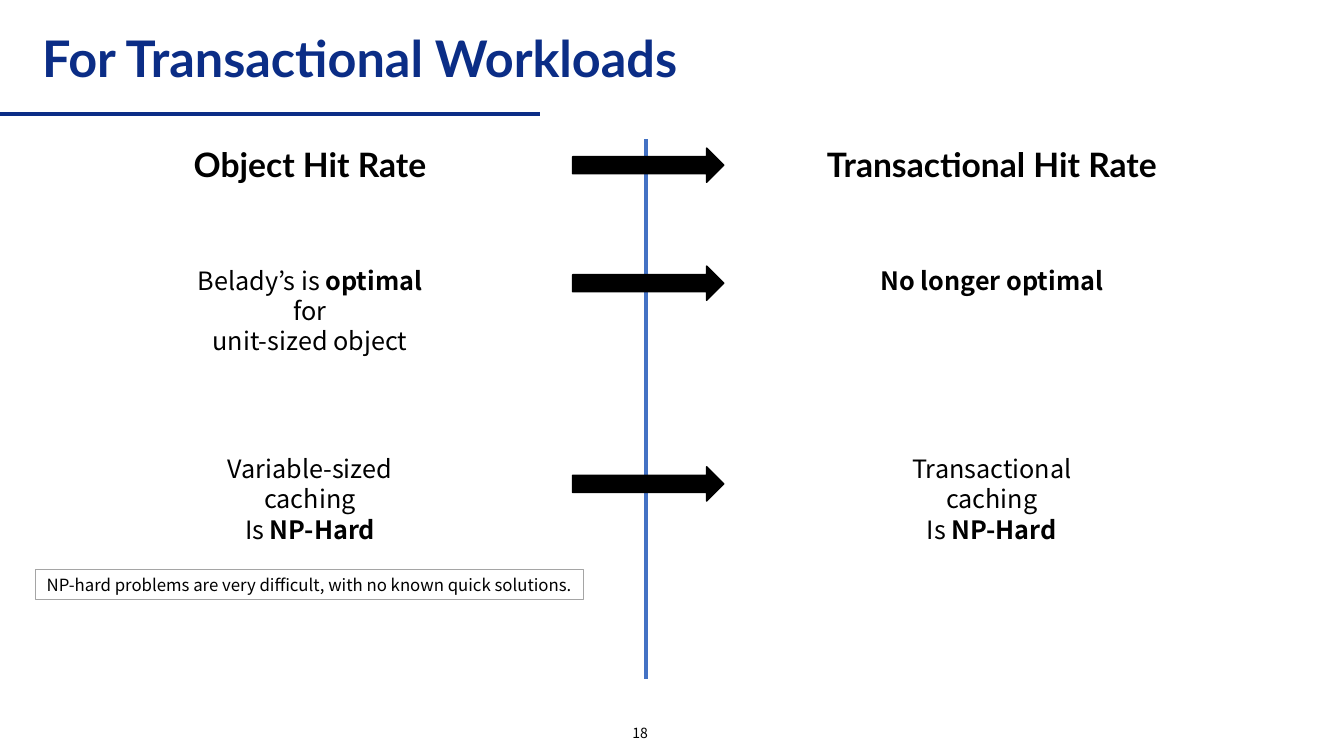
from dataclasses import dataclass

import pptx
import pptx.dml.color
import pptx.enum.shapes
import pptx.enum.text
import pptx.oxml.ns
import pptx.util
from lxml import etree

Pt = pptx.util.Pt
RGB = pptx.dml.color.RGBColor
SHAPE = pptx.enum.shapes.MSO_SHAPE
ALIGN = pptx.enum.text.PP_ALIGN
ANCHOR = pptx.enum.text.MSO_ANCHOR


@dataclass(frozen=True)
class Theme:
    """Hold the fonts, type sizes and colours."""
    heading_font: str = "Lato"
    body_font: str = "Noto Sans CJK KR"
    title_size: float = 36
    heading_size: float = 24
    body_size: float = 18
    note_size: float = 12
    number_size: float = 10
    navy: RGB = RGB(0x0B, 0x2D, 0x86)
    blue: RGB = RGB(0x44, 0x72, 0xC4)
    grey: RGB = RGB(0xA5, 0xA5, 0xA5)
    black: RGB = RGB(0, 0, 0)
    white: RGB = RGB(255, 255, 255)


@dataclass(frozen=True)
class Cell:
    """Describe one side of a comparison, with ** around bold words."""
    text: str
    width: float


@dataclass(frozen=True)
class Row:
    """Describe one comparison and its arrow."""
    left: Cell
    right: Cell
    top: float
    height: float
    arrow_top: float
    font: str
    size: float


T = Theme()
LEFT_CENTER, RIGHT_CENTER = 221.4, 708.5
ROWS = [
    Row(Cell("**Object Hit Rate**", 208), Cell("**Transactional Hit Rate**", 315.4),
        99.4, 31.7, 105.8, T.heading_font, T.heading_size),
    Row(Cell("Belady’s is **optimal** for\nunit-sized object", 200.2),
        Cell("**No longer optimal**", 175.7),
        185.8, 51.1, 190.1, T.body_font, T.body_size),
    Row(Cell("Variable-sized caching\nIs **NP-Hard**", 198),
        Cell("Transactional caching\nIs **NP-Hard**", 190.1),
        320.4, 51.1, 333.4, T.body_font, T.body_size),
]


def write(s, text: str, *, font: str = T.body_font, size: float = T.body_size,
          color: RGB = T.black, align=ALIGN.CENTER, anchor=ANCHOR.TOP,
          wrap: bool = True, spacing: float = 1.0) -> None:
    """Fill a shape with formatted text, one paragraph per line."""
    tf = s.text_frame
    tf.word_wrap = wrap
    tf.vertical_anchor = anchor
    for i, line in enumerate(text.split("\n")):
        p = tf.add_paragraph() if i else tf.paragraphs[0]
        p.alignment = align
        p.line_spacing = spacing
        for j, part in enumerate(line.split("**")):
            if part:
                r = p.add_run()
                r.text = part
                r.font.name = font
                r.font.size = Pt(size)
                r.font.bold = j % 2 == 1
                r.font.color.rgb = color


def add_box(slide, left: float, top: float, width: float, height: float):
    """Add an empty text box."""
    return slide.shapes.add_textbox(Pt(left), Pt(top), Pt(width), Pt(height))


def add_block(slide, kind, left: float, top: float, width: float, height: float,
              fill: RGB, line: RGB):
    """Add a filled preset shape with a thin outline."""
    s = slide.shapes.add_shape(kind, Pt(left), Pt(top), Pt(width), Pt(height))
    s.shadow.inherit = False
    s.fill.solid()
    s.fill.fore_color.rgb = fill
    s.line.color.rgb = line
    s.line.width = Pt(1)
    return s


def add_line(slide, x1: float, y1: float, x2: float, y2: float, color: RGB) -> None:
    """Add a straight line without a shadow."""
    s = slide.shapes.add_connector(pptx.enum.shapes.MSO_CONNECTOR.STRAIGHT,
                                   Pt(x1), Pt(y1), Pt(x2), Pt(y2))
    s.line.color.rgb = color
    s.line.width = Pt(3)
    etree.SubElement(s._element.spPr, pptx.oxml.ns.qn("a:effectLst"))


def add_row(slide, row: Row) -> None:
    """Add both sides of a comparison and the arrow between them."""
    for cell, center in ((row.left, LEFT_CENTER), (row.right, RIGHT_CENTER)):
        s = add_box(slide, center - cell.width / 2, row.top, cell.width, row.height)
        write(s, cell.text, font=row.font, size=row.size)
    add_block(slide, SHAPE.RIGHT_ARROW, 409, row.arrow_top, 108, 24.5, T.black, T.black)


def main() -> None:
    """Build and save the slide."""
    prs = pptx.Presentation()
    prs.slide_width, prs.slide_height = Pt(960), Pt(540)
    slide = prs.slides.add_slide(prs.slide_layouts[6])
    add_line(slide, 0, 81.4, 386, 81.4, T.navy)
    write(add_box(slide, 23, 17.3, 660.2, 53.3), "**For Transactional Workloads**",
          font=T.heading_font, size=T.title_size, color=T.navy, align=ALIGN.LEFT,
          anchor=ANCHOR.MIDDLE, spacing=0.9)
    write(add_box(slide, 349.2, 511.9, 216, 23), "18", size=T.number_size,
          anchor=ANCHOR.MIDDLE)
    add_line(slide, 461.5, 99.4, 461.5, 485.3, T.blue)
    for row in ROWS:
        add_row(slide, row)
    note = add_block(slide, SHAPE.RECTANGLE, 25.2, 406.8, 391.7, 21.6, T.white, T.grey)
    write(note, "NP-hard problems are very difficult, with no known quick solutions.",
          size=T.note_size, wrap=False)
    prs.save("out.pptx")


if __name__ == "__main__":
    main()
